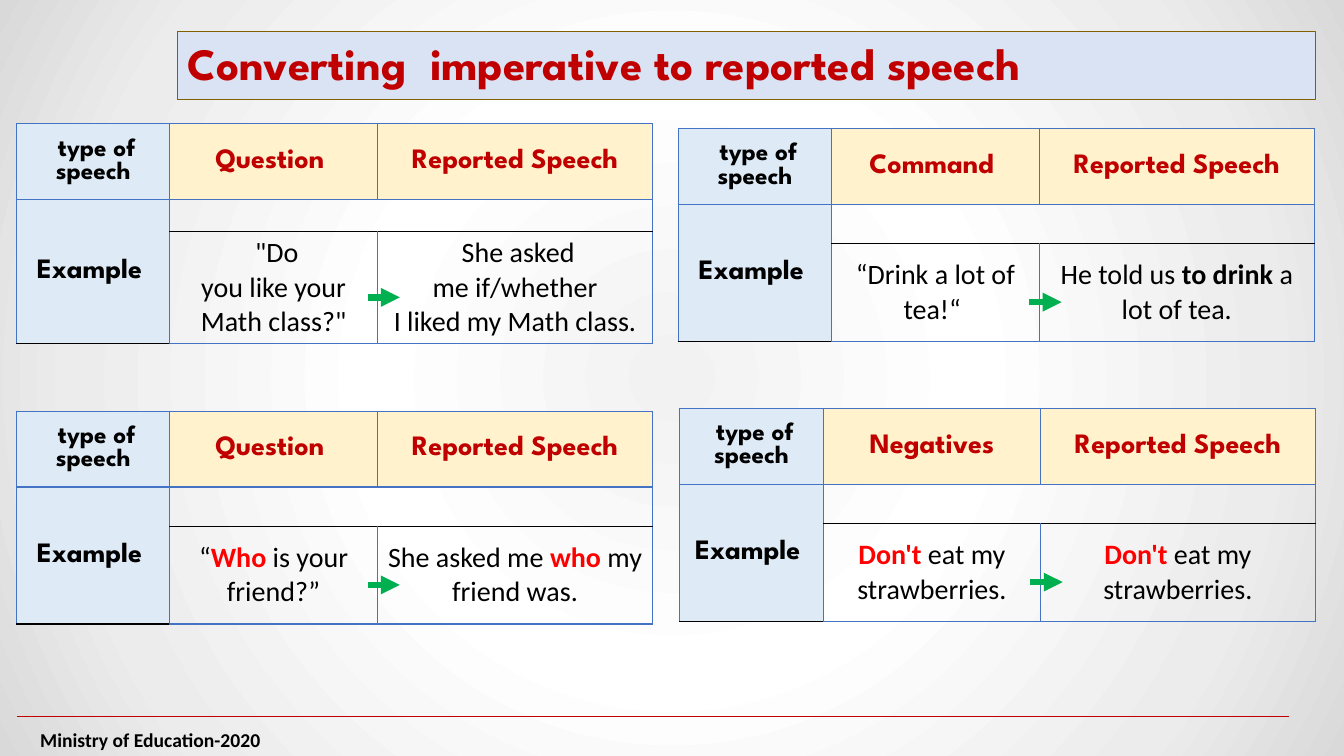
from pptx import Presentation
from pptx.dml.color import RGBColor
from pptx.enum.shapes import MSO_CONNECTOR as Line, MSO_SHAPE as Shape
from pptx.enum.text import MSO_ANCHOR as Anchor, PP_ALIGN as Align
from pptx.oxml import parse_xml
from pptx.oxml.ns import nsdecls
from pptx.util import Pt
from lxml.etree import SubElement

COLORS = {
    "title_fill": "DAE3F3", "title_line": "806000", "heading": "C00000",
    "label_fill": "DEEBF7", "head_fill": "FFF2CC", "border": "4472C4",
    "black": "000000", "accent": "FF0000", "arrow": "00B050",
}
BACKDROP = [(0, "F2F2F2"), (39, "FFFFFF"), (78, "ECECEC"), (100, "D9D9D9")]
DISPLAY, BODY = "League Spartan", "Calibri"
WIDE, NARROW = (109.4, 148.3, 196.6), (103, 154.8, 196.6)
TALL, SHORT = (54, 23, 80), (54, 28, 70)
TIE, HARD_SPACE = "~", chr(160)

EXAMPLES = [
    ((11.9, 88.4), WIDE, TALL, "Question ",
     [(' "Do you~like~your Math class?"', "black", False)],
     [(" She asked me~if/whether I~liked~my Math class.", "black", False)]),
    ((11.9, 293.8), WIDE, SHORT, "Question ",
     [("“", "black", False), ("Who", "accent", True), ("~is~your friend?”", "black", False)],
     [("She asked me~", "black", False), ("who", "accent", True),
      ("~my friend~was.", "black", False)]),
    ((484.6, 91.8), WIDE, SHORT, "Command ",
     [("“Drink a lot of tea!“ ", "black", False)],
     [("He told us~", "black", False), ("to drink", "black", True),
      ("~a lot of tea.", "black", False)]),
    ((485.3, 291.8), NARROW, SHORT, "Negatives",
     [("Don't", "accent", True), (" eat my strawberries.", "black", False)],
     [("Don't", "accent", True), (" eat my strawberries.", "black", False)]),
]


def rgb(name):
    """Return the named colour."""
    return RGBColor.from_string(COLORS[name])


def add_run(paragraph, text, size, font, color, bold=True):
    """Append one formatted run, turning ties into hard spaces."""
    run = paragraph.add_run()
    run.text = text.replace(TIE, HARD_SPACE)
    run.font.size, run.font.name, run.font.bold = Pt(size), font, bold
    run.font.color.rgb = rgb(color)


def paint_background(slide):
    """Give the slide its circular grey gradient."""
    stops = "".join(f'<a:gs pos="{pos * 1000}"><a:srgbClr val="{color}"/></a:gs>'
                    for pos, color in BACKDROP)
    slide.element.cSld.insert(0, parse_xml(
        f'<p:bg {nsdecls("p", "a")}><p:bgPr><a:gradFill rotWithShape="1">'
        f'<a:gsLst>{stops}</a:gsLst><a:path path="circle">'
        '<a:fillToRect l="50000" t="50000" r="50000" b="50000"/></a:path>'
        '</a:gradFill><a:effectLst/></p:bgPr></p:bg>'))


def add_title(slide, left, top, width, height):
    """Draw the title banner."""
    banner = slide.shapes.add_shape(Shape.RECTANGLE, Pt(left), Pt(top), Pt(width), Pt(height))
    banner.shadow.inherit = False
    banner.fill.solid()
    banner.fill.fore_color.rgb = rgb("title_fill")
    banner.line.color.rgb = rgb("title_line")
    banner.line.width = Pt(0.75)
    banner.text_frame.vertical_anchor = Anchor.MIDDLE
    banner.text_frame.word_wrap = True
    heading = banner.text_frame.paragraphs[0]
    heading.alignment, heading.line_spacing = Align.LEFT, 0.9
    add_run(heading, "Converting  imperative to reported speech", 32, DISPLAY, "heading")


def add_line(slide, left, top, width, color, weight, arrow=False):
    """Draw a horizontal line, with an arrowhead if asked."""
    line = slide.shapes.add_connector(Line.STRAIGHT, Pt(left), Pt(top), Pt(left + width), Pt(top))
    line.line.color.rgb = rgb(color)
    line.line.width = Pt(weight)
    if arrow:
        line.line._get_or_add_ln().append(
            parse_xml(f'<a:tailEnd {nsdecls("a")} type="triangle"/>'))
    line.element.spPr.append(parse_xml(f'<a:effectLst {nsdecls("a")}/>'))


def style_cell(cell, row, col):
    """Set the borders, fill and margins that belong to a cell's place."""
    black_sides = {
        "T": row == 2 and col > 0,
        "B": row == 1 or (row == 2 and col == 0),
    }
    properties = cell._tc.get_or_add_tcPr()
    for side in "LRTB":
        color = COLORS["black" if black_sides.get(side) else "border"]
        properties.append(parse_xml(
            f'<a:ln{side} {nsdecls("a")} w="12700"><a:solidFill>'
            f'<a:srgbClr val="{color}"/></a:solidFill></a:ln{side}>'))
    if row == 0 or col == 0:
        cell.fill.solid()
        cell.fill.fore_color.rgb = rgb("label_fill" if col == 0 else "head_fill")
    else:
        cell.fill.background()
    cell.margin_left = cell.margin_right = Pt(6 if (row, col) == (0, 2) else 3)
    cell.margin_top = cell.margin_bottom = Pt(3)
    cell.vertical_anchor = Anchor.MIDDLE


def add_example(slide, left, top, widths, heights, kind, direct, reported):
    """Draw one example table and the arrow from direct to reported speech."""
    table = slide.shapes.add_table(3, 3, Pt(left), Pt(top),
                                   Pt(sum(widths)), Pt(sum(heights))).table
    table.first_row = table.horz_banding = False
    for column, width in zip(table.columns, widths):
        column.width = Pt(width)
    for line, height in zip(table.rows, heights):
        line.height = Pt(height)
    table.cell(1, 0).merge(table.cell(2, 0))
    table.cell(1, 1).merge(table.cell(1, 2))
    labels = {
        (0, 0): (" type of speech", 18, "black"),
        (0, 1): (kind, 20, "heading"),
        (0, 2): ("Reported Speech", 20, "heading"),
        (1, 0): ("Example ", 20, "black"),
    }
    sentences = {(2, 1): direct, (2, 2): reported}
    for row in range(3):
        for col in range(3):
            cell = table.cell(row, col)
            style_cell(cell, row, col)
            paragraph = cell.text_frame.paragraphs[0]
            paragraph.alignment = Align.CENTER
            if (row, col) in labels:
                text, size, color = labels[row, col]
                add_run(paragraph, text, size, DISPLAY, color)
            for text, color, bold in sentences.get((row, col), []):
                add_run(paragraph, text, 20, BODY, color, bold)
            if not paragraph.runs:
                SubElement(paragraph._p, parse_xml(
                    f'<a:endParaRPr {nsdecls("a")}/>').tag, sz="1000")
    add_line(slide, left + widths[0] + widths[1] - 7, top + 124, 23, "arrow", 4.5, arrow=True)


def add_footer(slide, left, top, width):
    """Draw the footer rule and the publisher's line under it."""
    add_line(slide, left, top, width, "heading", 0.5)
    publisher = slide.shapes.add_textbox(Pt(left + 9.4), Pt(top + 4.7), Pt(233), Pt(24.5))
    publisher.text_frame.word_wrap = True
    add_run(publisher.text_frame.paragraphs[0], "Ministry of Education-2020", 14, BODY, "black")


def main():
    """Build the slide and save it."""
    deck = Presentation()
    deck.slide_width, deck.slide_height = Pt(960), Pt(540)
    slide = deck.slides.add_slide(deck.slide_layouts[6])
    paint_background(slide)
    add_title(slide, 126.7, 22.7, 813, 48.2)
    for (left, top), *content in EXAMPLES:
        add_example(slide, left, top, *content)
    add_footer(slide, 12.2, 511.5, 908.7)
    deck.save("out.pptx")


if __name__ == "__main__":
    main()
